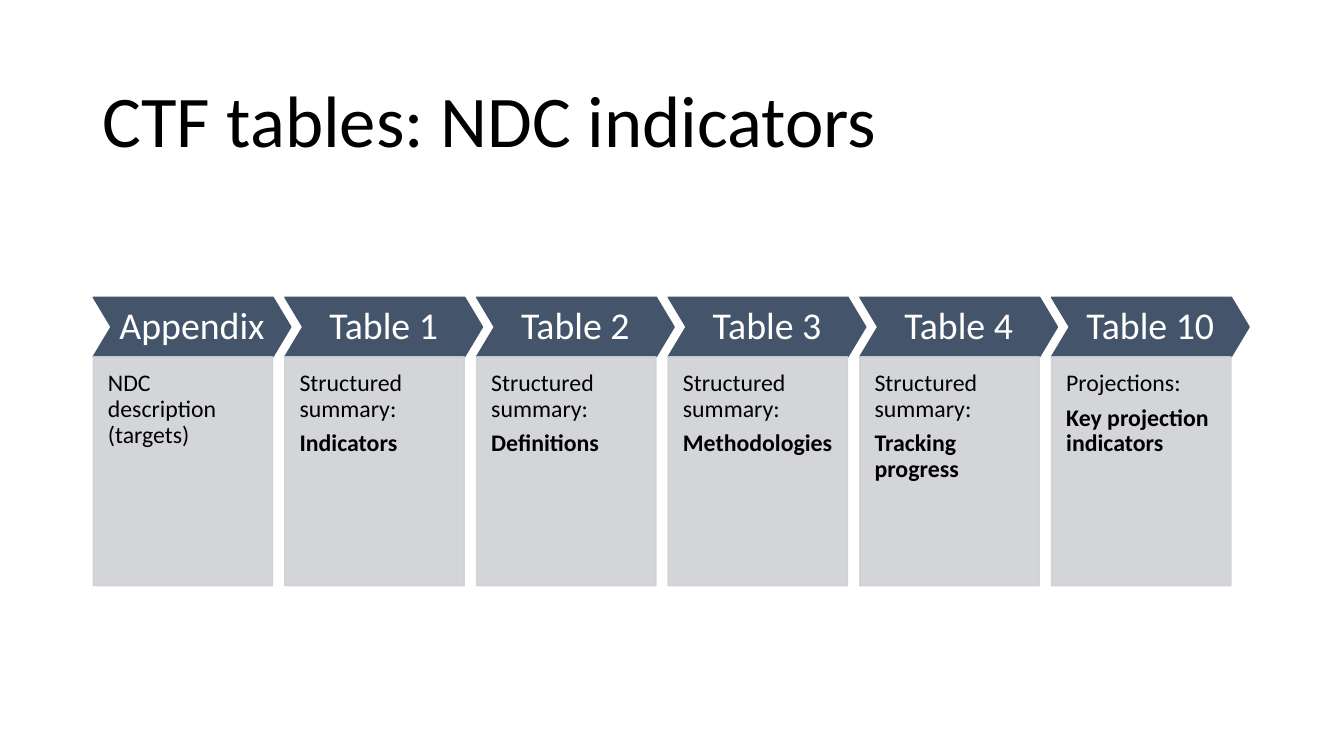
from lxml import etree
from pptx import Presentation
from pptx.dml.color import RGBColor
from pptx.enum.shapes import MSO_SHAPE
from pptx.enum.text import MSO_ANCHOR, MSO_AUTO_SIZE, PP_ALIGN
from pptx.oxml.ns import qn
from pptx.util import Cm, Pt

CHEVRON, RECTANGLE = MSO_SHAPE.CHEVRON, MSO_SHAPE.RECTANGLE
TOP, MIDDLE = MSO_ANCHOR.TOP, MSO_ANCHOR.MIDDLE
LEFT, CENTER = PP_ALIGN.LEFT, PP_ALIGN.CENTER

COLORS = {"header": "44546A", "panel": "CFD1D4", "text": "000000", "white": "FFFFFF"}
FONT = "Calibri"

COLUMNS = [
    ("Appendix", ["NDC description (targets)"]),
    ("Table 1", ["Structured summary:", "Indicators"]),
    ("Table 2", ["Structured summary:", "Definitions"]),
    ("Table 3", ["Structured summary:", "Methodologies"]),
    ("Table 4", ["Structured summary:", "Tracking progress"]),
    ("Table 10", ["Projections:", "Key projection indicators"]),
]
FIRST_LEFT, PITCH = 2.35, 4.83
HEADER_TOP, HEADER_WIDTH, HEADER_HEIGHT = 7.49, 4.98, 1.5
PANEL_WIDTH, PANEL_HEIGHT = 4.52, 5.77


def write(tf, lines, size, color, align, anchor):
    """Fill a text frame, one paragraph per line, with every line after the first bold."""
    tf.word_wrap = True
    tf.auto_size = MSO_AUTO_SIZE.NONE
    tf.vertical_anchor = anchor
    for i, line in enumerate(lines):
        p = tf.paragraphs[0] if i == 0 else tf.add_paragraph()
        p.text = line
        p.alignment = align
        p.line_spacing = 0.9
        p.space_after = Pt(6)
        p.font.name = FONT
        p.font.size = Pt(size)
        p.font.bold = i > 0
        p.font.color.rgb = RGBColor.from_string(COLORS[color])


def add_block(kind, left, top, width, height, color, margins):
    sp = s.shapes.add_shape(kind, Cm(left), Cm(top), Cm(width), Cm(height))
    sp.shadow.inherit = False
    sp.fill.solid()
    sp.fill.fore_color.rgb = sp.line.color.rgb = RGBColor.from_string(COLORS[color])
    sp.line.width = Pt(1)
    tf = sp.text_frame
    tf.margin_left, tf.margin_top, tf.margin_right, tf.margin_bottom = map(Cm, margins)
    return sp


prs = Presentation()
prs.slide_width, prs.slide_height = Cm(33.87), Cm(19.05)
s = prs.slides.add_slide(prs.slide_layouts[5])

title = s.shapes.title
title.left, title.top, title.width, title.height = Cm(2.33), Cm(1.55), Cm(29.21), Cm(3.15)
write(title.text_frame, ["CTF tables: NDC indicators"], 52, "text", LEFT, MIDDLE)
title.text_frame.paragraphs[0].space_after = Pt(0)

for i, (heading, lines) in enumerate(COLUMNS):
    left = FIRST_LEFT + i * PITCH

    header = add_block(CHEVRON, left, HEADER_TOP, HEADER_WIDTH, HEADER_HEIGHT,
                       "header", (0, 0.18, 0, 0.18))
    header.adjustments[0] = 0.3
    write(header.text_frame, [heading], 27, "white", CENTER, MIDDLE)

    panel = add_block(RECTANGLE, left, HEADER_TOP + HEADER_HEIGHT, PANEL_WIDTH, PANEL_HEIGHT,
                      "panel", (0.37, 0.37, 0.3, 0.7))
    for clr in panel._element.spPr.iter(qn("a:srgbClr")):
        etree.SubElement(clr, qn("a:alpha"), val="90000")
    write(panel.text_frame, lines, 17, "text", LEFT, TOP)

prs.save("out.pptx")
